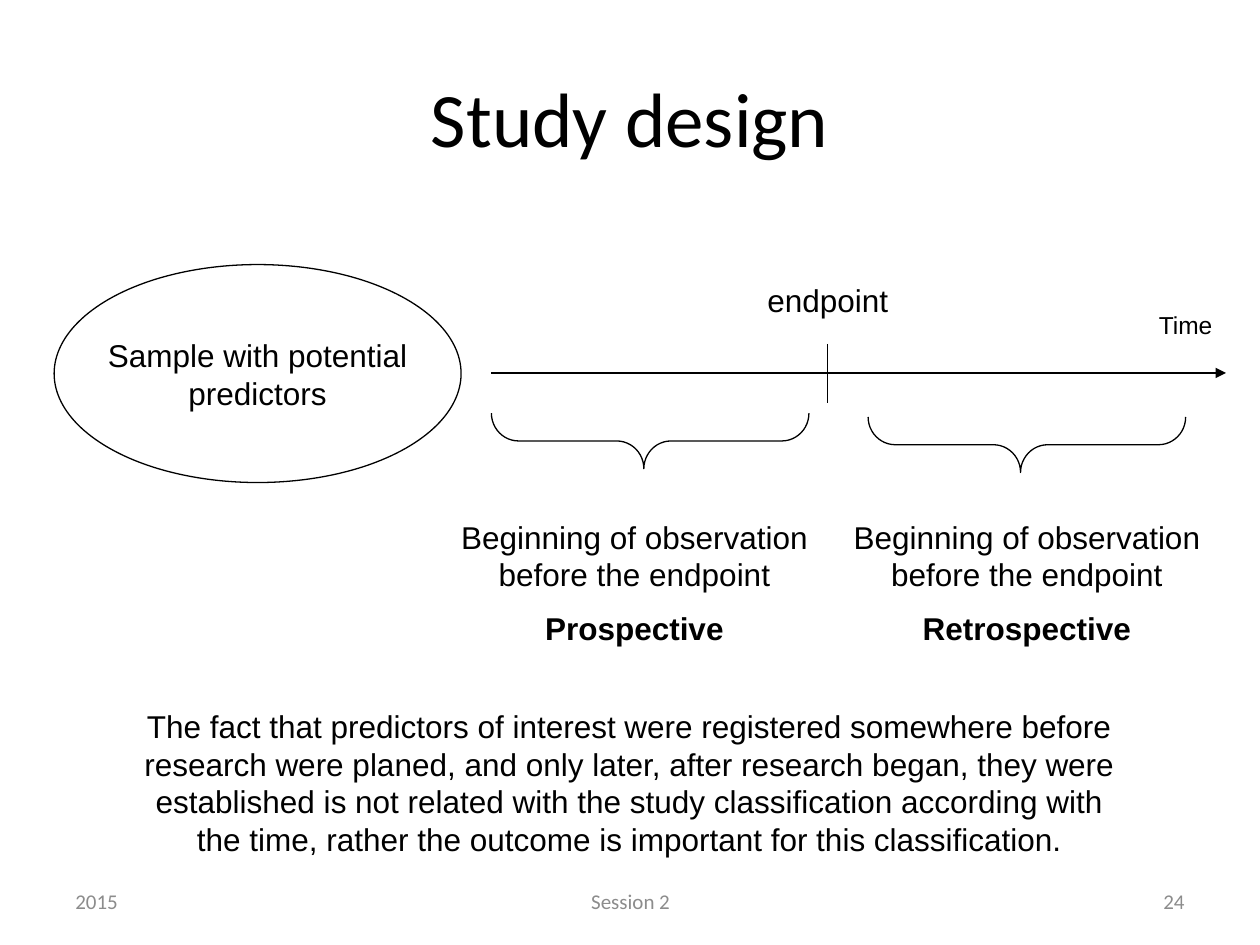
from dataclasses import dataclass

from lxml import etree
from pptx import Presentation
from pptx.dml.color import RGBColor
from pptx.enum.shapes import MSO_CONNECTOR, MSO_SHAPE
from pptx.enum.text import MSO_ANCHOR, PP_ALIGN
from pptx.oxml.ns import qn
from pptx.util import Inches, Pt

LEFT, CENTER, RIGHT = PP_ALIGN.LEFT, PP_ALIGN.CENTER, PP_ALIGN.RIGHT
TOP, MIDDLE = MSO_ANCHOR.TOP, MSO_ANCHOR.MIDDLE
ELLIPSE, RIGHT_BRACE = MSO_SHAPE.OVAL, MSO_SHAPE.RIGHT_BRACE
STRAIGHT = MSO_CONNECTOR.STRAIGHT


@dataclass(frozen=True)
class Theme:
    heading_font: str = "Calibri"
    body_font: str = "Arial"
    ink: RGBColor = RGBColor(0x00, 0x00, 0x00)
    muted: RGBColor = RGBColor(0x8C, 0x8C, 0x8C)
    title_size: int = 44
    body_size: int = 18
    time_size: int = 14
    footer_size: int = 12
    paragraph_gap: int = 9
    line_width: float = 0.75


THEME = Theme()


def style_paragraph(paragraph, font=THEME.body_font, size=THEME.body_size,
                    color=THEME.ink, align=CENTER):
    paragraph.alignment = align
    for run in paragraph.runs:
        run.font.name = font
        run.font.size = Pt(size)
        run.font.color.rgb = color


def add_text(slide, box, text, anchor=TOP, **style):
    shape = slide.shapes.add_textbox(*map(Inches, box))
    text_frame = shape.text_frame
    text_frame.word_wrap = True
    text_frame.vertical_anchor = anchor
    text_frame.text = text
    for paragraph in text_frame.paragraphs:
        style_paragraph(paragraph, **style)
    return text_frame


def add_footer(slide, left, width, text, align):
    add_text(slide, (left, 6.95, width, 0.4), text, MIDDLE, align=align,
             font=THEME.heading_font, size=THEME.footer_size, color=THEME.muted)


def add_outline(slide, kind, box):
    shape = slide.shapes.add_shape(kind, *map(Inches, box))
    shape.shadow.inherit = False
    shape.fill.background()
    shape.line.color.rgb = THEME.ink
    shape.line.width = Pt(THEME.line_width)
    return shape


def add_sample(slide):
    shape = add_outline(slide, ELLIPSE, (0.43, 2.1, 3.23, 1.73))
    text_frame = shape.text_frame
    text_frame.word_wrap = False
    text_frame.vertical_anchor = MIDDLE
    text_frame.text = "Sample with potential\npredictors"
    for paragraph in text_frame.paragraphs:
        style_paragraph(paragraph)


def add_brace(slide, left, top):
    brace = add_outline(slide, RIGHT_BRACE, (left, top, 0.44, 2.52))
    brace.rotation = 90
    brace.adjustments[0] = 0.49
    brace.adjustments[1] = 0.52


def add_line(slide, start, end, arrow=False):
    connector = slide.shapes.add_connector(STRAIGHT, *map(Inches, start + end))
    connector.line.color.rgb = THEME.ink
    connector.line.width = Pt(THEME.line_width)
    if arrow:
        line = connector.line._get_or_add_ln()
        etree.SubElement(line, qn("a:tailEnd"), type="triangle")
    etree.SubElement(connector._element.spPr, qn("a:effectLst"))


def add_study_type(slide, left, width, name):
    text = f"Beginning of observation before the endpoint\n{name}"
    text_frame = add_text(slide, (left, 4.06, width, 1.16), text)
    name_paragraph = text_frame.paragraphs[1]
    name_paragraph.space_before = Pt(THEME.paragraph_gap)
    name_paragraph.runs[0].font.bold = True


def main():
    presentation = Presentation()
    presentation.slide_width = Inches(10)
    presentation.slide_height = Inches(7.5)
    slide = presentation.slides.add_slide(presentation.slide_layouts[6])

    add_text(slide, (0.5, 0.3, 9, 1.25), "Study design", MIDDLE,
             font=THEME.heading_font, size=THEME.title_size)
    add_sample(slide)

    add_line(slide, (3.9, 2.96), (9.73, 2.96), arrow=True)
    add_line(slide, (6.57, 2.73), (6.57, 3.2))
    add_text(slide, (5.94, 2.18, 1.26, 0.4), "endpoint")
    add_text(slide, (8.78, 2.41, 1.26, 0.33), "Time", size=THEME.time_size)

    add_brace(slide, 4.94, 2.24)
    add_brace(slide, 7.93, 2.27)
    add_study_type(slide, 3.5, 3.07, "Prospective")
    add_study_type(slide, 6.58, 3.14, "Retrospective")

    add_text(slide, (0.98, 5.56, 8.03, 1.31),
             "The fact that predictors of interest were registered somewhere "
             "before research were planed, and only later, after research "
             "began, they were established is not related with the study "
             "classification according with the time, rather the outcome is "
             "important for this classification.")

    add_footer(slide, 0.5, 2.33, "2015", LEFT)
    add_footer(slide, 3.42, 3.17, "Session 2", CENTER)
    add_footer(slide, 7.17, 2.33, "24", RIGHT)

    presentation.save("out.pptx")


if __name__ == "__main__":
    main()
